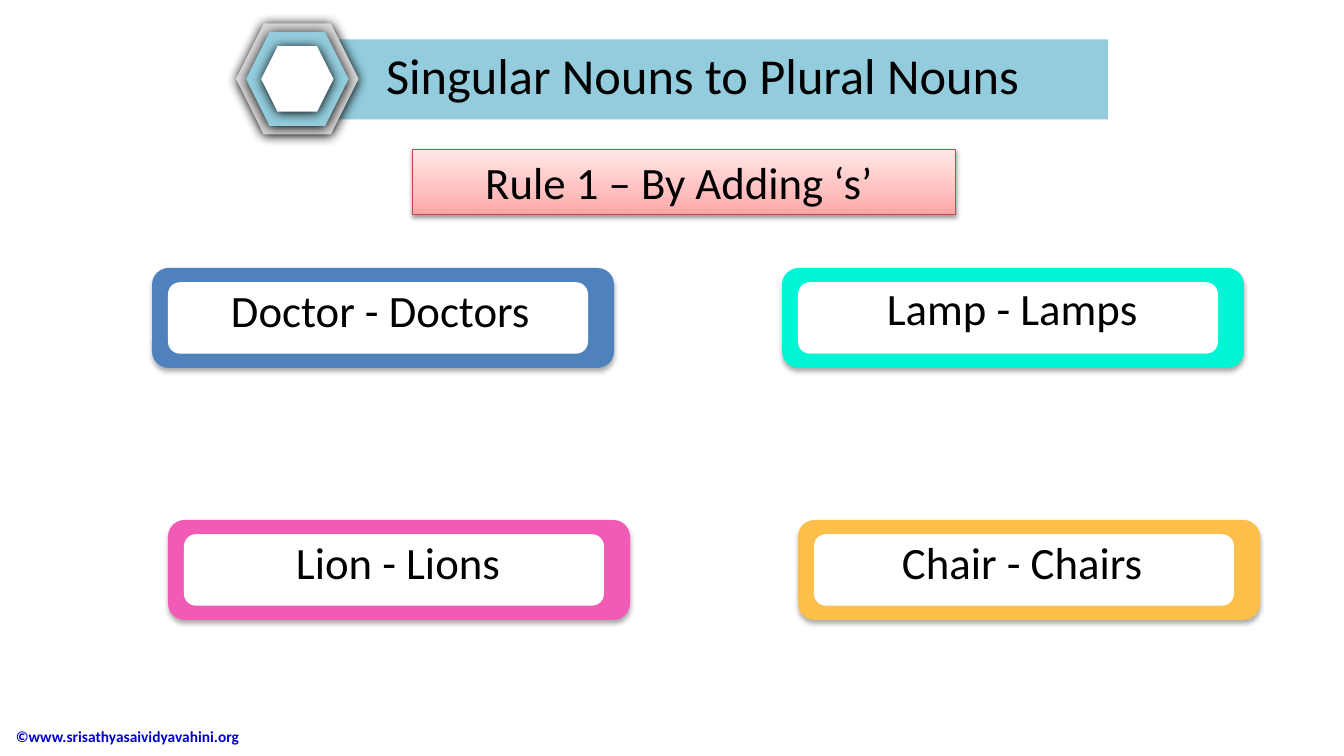
from lxml import etree
from pptx import Presentation
from pptx.dml.color import RGBColor
from pptx.enum.shapes import MSO_SHAPE
from pptx.enum.text import MSO_ANCHOR, MSO_AUTO_SIZE, PP_ALIGN
from pptx.oxml.ns import qn
from pptx.util import Inches, Pt

RECTANGLE = MSO_SHAPE.RECTANGLE
ROUNDED = MSO_SHAPE.ROUNDED_RECTANGLE
HEXAGON = MSO_SHAPE.HEXAGON
TOP = MSO_ANCHOR.TOP
MIDDLE = MSO_ANCHOR.MIDDLE
CENTER = PP_ALIGN.CENTER
LEFT = PP_ALIGN.LEFT
NO_RESIZE = MSO_AUTO_SIZE.NONE
TITLE_ONLY = 5

COLUMNS, ROWS = 160, 90
HEXAGON_SHADOW = (100, 8.5, 1)
CARD_SHADOW = (32, 3.5, 2.2)
RULE_SHADOW = (38, 3.1, 1.6)


def color(value):
    return RGBColor.from_string(value)


class SlideBuilder:
    font = "Calibri"
    ink = "000000"

    def __init__(self, presentation):
        self.column = presentation.slide_width / COLUMNS
        self.row = presentation.slide_height / ROWS
        self.slide = presentation.slides.add_slide(presentation.slide_layouts[TITLE_ONLY])

    def box(self, left, top, width, height):
        return (round(left * self.column), round(top * self.row),
                round(width * self.column), round(height * self.row))

    def shape(self, kind, area, fill, shadow=None):
        shape = self.slide.shapes.add_shape(kind, *self.box(*area))
        shape.fill.solid()
        shape.fill.fore_color.rgb = color(fill)
        shape.line.fill.background()
        shape.shadow.inherit = False
        if shadow:
            self.shadow(shape, *shadow)
        return shape

    def shadow(self, shape, opacity, blur, distance):
        effects = shape.element.spPr.find(qn("a:effectLst"))
        outer = etree.SubElement(effects, qn("a:outerShdw"), blurRad=str(Pt(blur)),
                                 dist=str(Pt(distance)), dir="5400000", rotWithShape="0")
        tone = etree.SubElement(outer, qn("a:srgbClr"), val="000000")
        etree.SubElement(tone, qn("a:alpha"), val=str(opacity * 1000))

    def gradient(self, shape, stops, angle):
        shape.fill.gradient()
        shape.fill.gradient_angle = angle
        stop_list = shape.element.spPr.find(".//" + qn("a:gsLst"))
        for stop in list(stop_list):
            stop_list.remove(stop)
        for position, value in stops:
            stop = etree.SubElement(stop_list, qn("a:gs"), pos=str(position * 1000))
            etree.SubElement(stop, qn("a:srgbClr"), val=value)

    def label(self, shape, text, size, ink=ink, bold=False, align=CENTER, anchor=TOP, wrap=True):
        frame = shape.text_frame
        frame.word_wrap = wrap
        frame.auto_size = NO_RESIZE
        frame.vertical_anchor = anchor
        paragraph = frame.paragraphs[0]
        paragraph.alignment = align
        run = paragraph.add_run()
        run.text = text
        run.font.name = self.font
        run.font.size = Pt(size)
        run.font.bold = bold
        run.font.color.rgb = color(ink)

    def text(self, area, text, size, **style):
        self.label(self.slide.shapes.add_textbox(*self.box(*area)), text, size, **style)

    def title(self, area, text, size):
        title = self.slide.shapes.title
        title.left, title.top, title.width, title.height = self.box(*area)
        self.label(title, text, size, wrap=False)
        title.element.getparent().append(title.element)

    def hexagon(self, width, height, fill):
        center_x, center_y = 35.4, 9.4
        area = (center_x - width / 2, center_y - height / 2, width, height)
        self.shape(HEXAGON, area, fill, HEXAGON_SHADOW)

    def card(self, left, top, fill, text, label_left, label_top):
        self.shape(ROUNDED, (left, top, 55, 11.9), fill, CARD_SHADOW)
        self.shape(ROUNDED, (left + 1.9, top + 1.7, 50, 8.5), "FFFFFF")
        self.text((left + label_left, top + label_top, 52, 7.7), text, 32)

    def rule(self, area, text):
        banner = self.shape(RECTANGLE, area, "FFC0BF", RULE_SHADOW)
        self.gradient(banner, [(0, "FFA6A5"), (35, "FFC0BF"), (100, "FFE7E7")], 90)
        banner.line.color.rgb = color("BF4C48")
        banner.line.width = Pt(0.75)
        self.label(banner, text, 32)
        banner.text_frame.margin_right = Inches(0.2)


def main():
    presentation = Presentation()
    presentation.slide_width = Inches(13.33)
    presentation.slide_height = Inches(7.5)
    builder = SlideBuilder(presentation)

    builder.text((0.7, 85.2, 42, 4.9), "©www.srisathyasaividyavahini.org", 11,
                 ink="0000CC", bold=True, align=LEFT, anchor=MIDDLE)

    builder.shape(RECTANGLE, (35.8, 4.7, 96.1, 9.5), "93CDDD")
    for width, height, fill in [(14.6, 13.2, "D9D9D9"), (12.2, 11.2, "93CDDD"), (8.6, 7.8, "FFFFFF")]:
        builder.hexagon(width, height, fill)
    builder.title((44.4, 4.7, 78.5, 8.5), "Singular Nouns to Plural Nouns", 36)

    cards = [
        ("4F81BD", "Doctor - Doctors", 1.2, 1.2),
        ("00F5D4", "Lamp - Lamps", 1.4, 0.9),
        ("F15BB5", "Lion - Lions", 1.4, 1.2),
        ("FCBF49", "Chair - Chairs", 0.7, 1.2),
    ]
    for index, card in enumerate(cards):
        row, column = divmod(index, 2)
        builder.card(18.1 + 75 * column + 1.9 * row, 31.9 + 30 * row, *card)

    builder.rule((49.1, 17.8, 64.7, 7.7), "Rule 1 – By Adding ‘s’")
    presentation.save("out.pptx")


if __name__ == "__main__":
    main()
